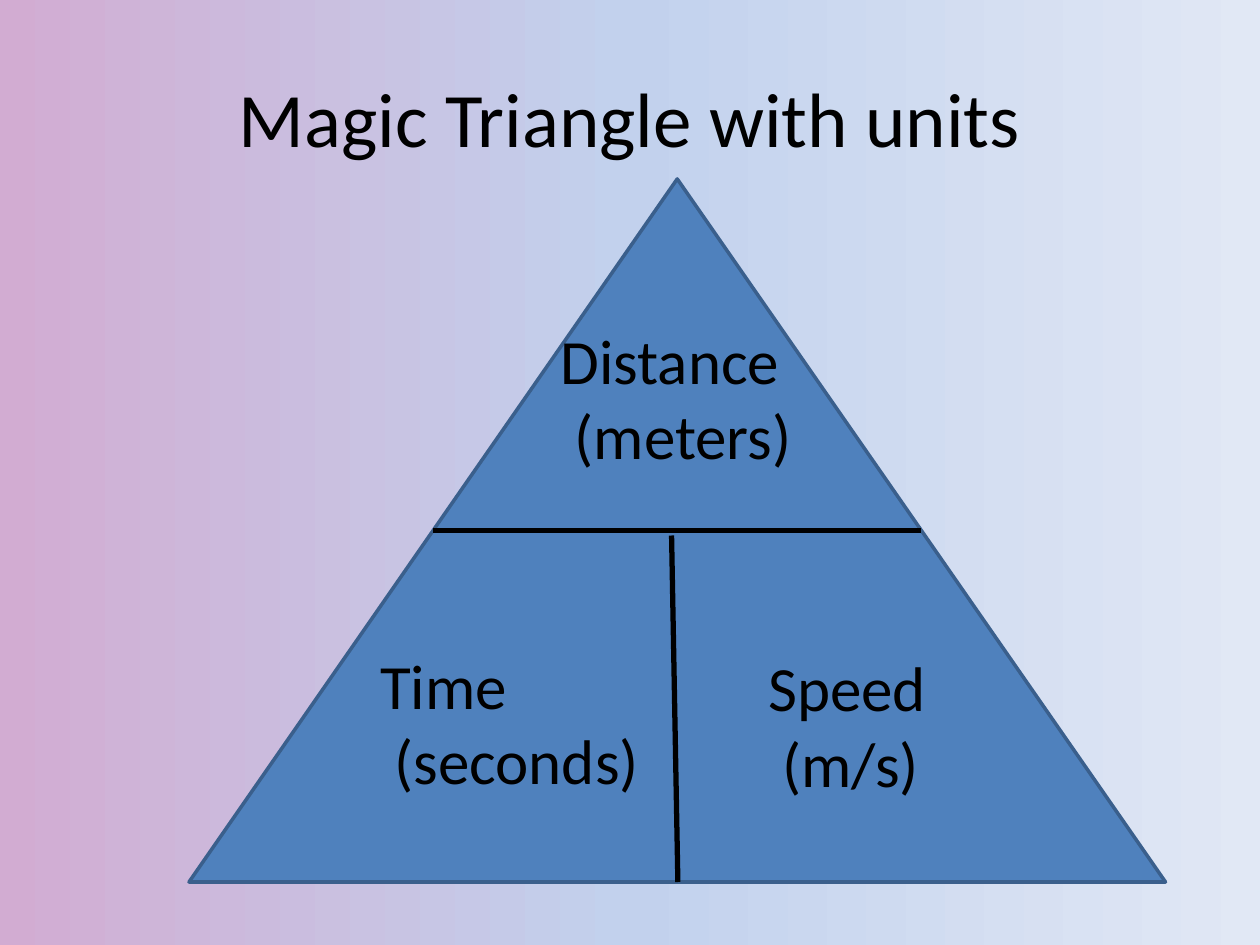
from copy import deepcopy

from pptx import Presentation
from pptx.dml.color import RGBColor
from pptx.enum.shapes import MSO_CONNECTOR as CONNECTOR, MSO_SHAPE as SHAPE
from pptx.enum.text import MSO_ANCHOR as ANCHOR, MSO_AUTO_SIZE as AUTO_SIZE, PP_ALIGN as ALIGN
from pptx.oxml.ns import qn
from pptx.oxml.xmlchemy import OxmlElement
from pptx.util import Inches, Pt

BLACK = RGBColor(0x00, 0x00, 0x00)
BLUE = RGBColor(0x4F, 0x81, 0xBD)
DARK_BLUE = RGBColor(0x3A, 0x5F, 0x8C)
PINK = RGBColor(0xD2, 0xAC, 0xD2)
PALE_BLUE = RGBColor(0xC2, 0xD1, 0xED)
ICE_BLUE = RGBColor(0xE1, 0xE8, 0xF5)


def add_text(slide, lines, left, top, width, height, size=36, wrap=False,
             align=ALIGN.LEFT, anchor=ANCHOR.TOP, auto_size=AUTO_SIZE.SHAPE_TO_FIT_TEXT):
    box = slide.shapes.add_textbox(Inches(left), Inches(top), Inches(width), Inches(height))
    frame = box.text_frame
    frame.word_wrap = wrap
    frame.auto_size = auto_size
    frame.vertical_anchor = anchor
    frame.text = "\n".join(lines)
    for paragraph in frame.paragraphs:
        paragraph.alignment = align
        paragraph.font.name = "Calibri"
        paragraph.font.size = Pt(size)
        paragraph.font.color.rgb = BLACK


presentation = Presentation()
presentation.slide_width = Inches(10)
presentation.slide_height = Inches(7.5)
slide = presentation.slides.add_slide(presentation.slide_layouts[6])

# Background: three-colour gradient from left to right
background = slide.background.fill
background.gradient()
background.gradient_angle = 0
stop_list = slide.element.find(".//" + qn("a:gsLst"))
stop_list.append(deepcopy(stop_list[0]))
for stop, color, position in zip(background.gradient_stops, (PINK, PALE_BLUE, ICE_BLUE), (0, 0.5, 1)):
    stop.color.rgb = color
    stop.position = position

# Title
add_text(slide, ["Magic Triangle with units"], 0.5, 0.3, 9, 1.25, size=44, wrap=True,
         align=ALIGN.CENTER, anchor=ANCHOR.MIDDLE, auto_size=AUTO_SIZE.NONE)

# Triangle
triangle = slide.shapes.add_shape(
    SHAPE.ISOSCELES_TRIANGLE, Inches(1.5), Inches(1.42), Inches(7.75), Inches(5.58))
triangle.shadow.inherit = False
triangle.fill.solid()
triangle.fill.fore_color.rgb = BLUE
triangle.line.color.rgb = DARK_BLUE
triangle.line.width = Pt(2)

# Dividing lines: across the middle, then down to the base
for start_x, start_y, end_x, end_y in [(3.44, 4.21, 7.31, 4.21), (5.38, 7, 5.33, 4.25)]:
    divider = slide.shapes.add_connector(
        CONNECTOR.STRAIGHT, Inches(start_x), Inches(start_y), Inches(end_x), Inches(end_y))
    divider.line.color.rgb = BLACK
    divider.line.width = Pt(3)
    divider.element.spPr.append(OxmlElement("a:effectLst"))

# Quantities with their units
for quantity, unit, left, top, width in [
    ("Distance", "meters", 4.35, 2.5, 2.05),
    ("Time", "seconds", 2.92, 5.08, 2.27),
    ("Speed", "m/s", 6, 5.1, 1.46),
]:
    add_text(slide, [quantity, f" ({unit})"], left, top, width, 1.31)

presentation.save("out.pptx")
